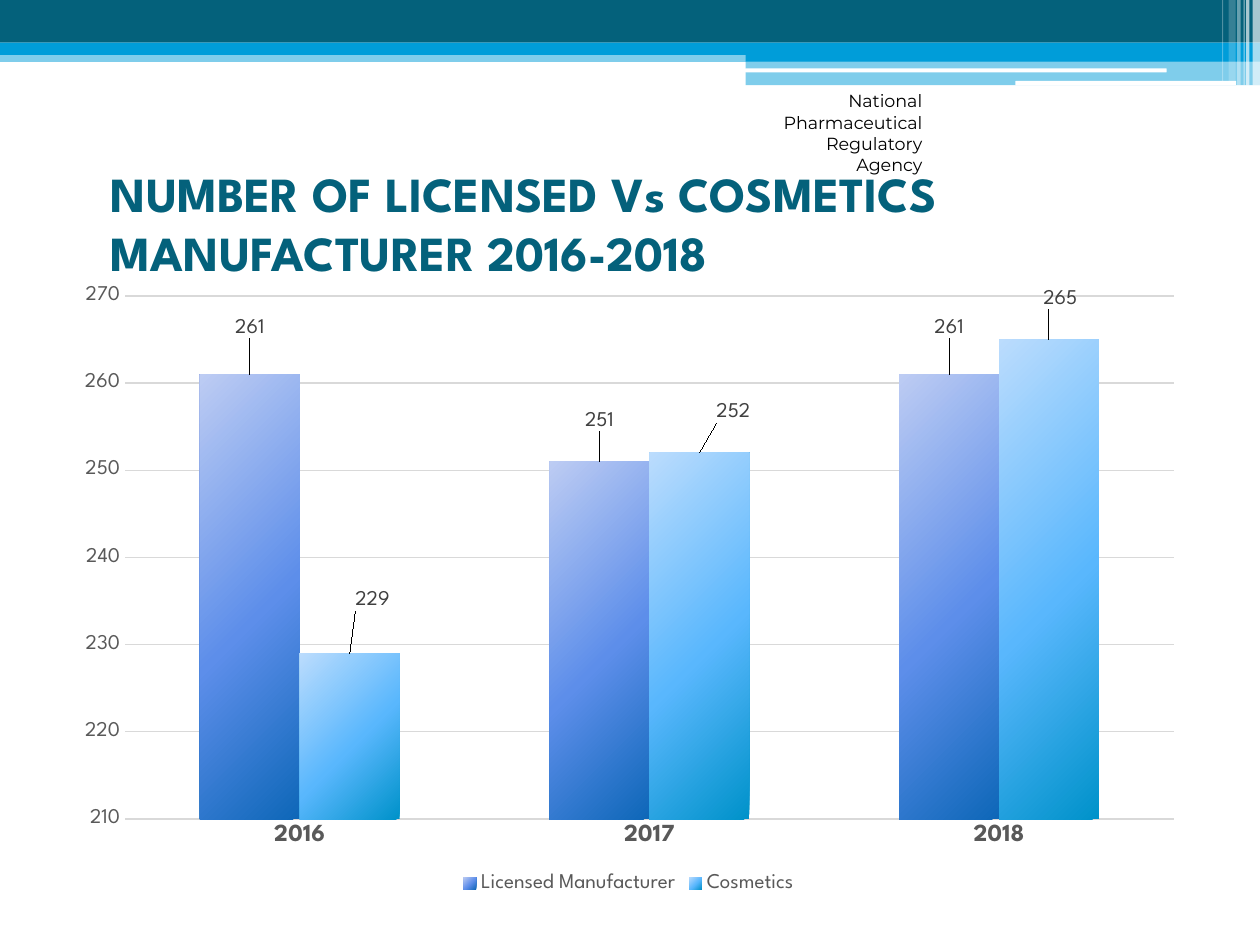
from pptx import Presentation
from pptx.chart.data import CategoryChartData
from pptx.dml.color import RGBColor
from pptx.enum.chart import (XL_CHART_TYPE, XL_LABEL_POSITION,
                             XL_LEGEND_POSITION, XL_TICK_MARK)
from pptx.enum.shapes import MSO_SHAPE
from pptx.enum.text import MSO_ANCHOR, MSO_AUTO_SIZE, PP_ALIGN
from pptx.oxml import parse_xml
from pptx.oxml.ns import nsdecls, qn
from pptx.util import Cm, Pt
from lxml.etree import SubElement

TEAL = RGBColor(0x04, 0x61, 0x7B)
BLUE = RGBColor(0x00, 0x9D, 0xD9)
WHITE = RGBColor(0xFF, 0xFF, 0xFF)
BLACK = RGBColor(0x00, 0x00, 0x00)
GRAY = RGBColor(0x59, 0x59, 0x59)
DARK = RGBColor(0x40, 0x40, 0x40)
PALE = RGBColor(0xD9, 0xD9, 0xD9)
HEAD, BODY = "League Spartan", "Montserrat"
WIDE = 25.4


class Deck:
    def __init__(self):
        self.prs = Presentation()
        self.prs.slide_width, self.prs.slide_height = Cm(WIDE), Cm(19.05)
        self.slide = self.prs.slides.add_slide(self.prs.slide_layouts[5])

    def style(self, font, size, color, bold=False, face=HEAD):
        font.name, font.size, font.bold = face, Pt(size), bold
        font.color.rgb = color

    def place(self, item, box):
        item.left, item.top, item.width, item.height = map(Cm, box)

    def band(self, box, color, alpha=100, kind=MSO_SHAPE.RECTANGLE):
        shape = self.slide.shapes.add_shape(kind, *map(Cm, box))
        shape.shadow.inherit = False
        shape.line.fill.background()
        shape.fill.solid()
        shape.fill.fore_color.rgb = color
        if alpha < 100:
            tint = shape.fill._xPr.find(".//" + qn("a:srgbClr"))
            SubElement(tint, qn("a:alpha")).set("val", str(alpha * 1000))

    def title(self, text, box):
        title = self.slide.shapes.title
        self.place(title, box)
        frame = title.text_frame
        frame.auto_size = MSO_AUTO_SIZE.NONE
        frame.vertical_anchor = MSO_ANCHOR.MIDDLE
        para = frame.paragraphs[0]
        para.alignment = PP_ALIGN.LEFT
        run = para.add_run()
        run.text = text
        self.style(run.font, 28, TEAL, True)

    def note(self, lines, box):
        frame = self.slide.shapes.add_textbox(*map(Cm, box)).text_frame
        frame.word_wrap = True
        for i, line in enumerate(lines):
            para = frame.add_paragraph() if i else frame.paragraphs[0]
            para.alignment = PP_ALIGN.RIGHT
            run = para.add_run()
            run.text = line
            self.style(run.font, 10, BLACK, face=BODY)

    def blend(self, series, stops):
        series.format.fill.solid()
        props = series._element.spPr
        marks = "".join(f'<a:gs pos="{pos}"><a:srgbClr val="{color}"/></a:gs>'
                        for pos, color in zip((0, 55000, 100000), stops))
        grad = parse_xml(
            f'<a:gradFill {nsdecls("a")} rotWithShape="1"><a:gsLst>{marks}'
            '</a:gsLst><a:path path="circle"><a:fillToRect l="-40000" '
            't="-90000" r="140000" b="190000"/></a:path></a:gradFill>')
        props.replace(props.find(qn("a:solidFill")), grad)

    def shift(self, label, x, y):
        """Move a data label by fractions of the chart size."""
        entry = label._get_or_add_dLbl()
        entry.insert(1, parse_xml(
            f'<c:layout {nsdecls("c")}><c:manualLayout><c:x val="{x}"/>'
            f'<c:y val="{y}"/></c:manualLayout></c:layout>'))

    def chart(self, cats, rows, box):
        data = CategoryChartData()
        data.categories = cats
        for name, vals, *_ in rows:
            data.add_series(name, vals)
        chart = self.slide.shapes.add_chart(
            XL_CHART_TYPE.COLUMN_CLUSTERED, *map(Cm, box), data).chart
        chart.has_title = False
        self.style(chart.font, 10, BLACK)

        # Legend
        chart.has_legend = True
        chart.legend.position = XL_LEGEND_POSITION.BOTTOM
        chart.legend.include_in_layout = False
        self.style(chart.legend.font, 12, GRAY)

        # Axes
        cat, val = chart.category_axis, chart.value_axis
        for axis in (cat, val):
            axis.major_tick_mark = axis.minor_tick_mark = XL_TICK_MARK.NONE
        self.style(cat.tick_labels.font, 14, GRAY, True)
        self.style(val.tick_labels.font, 12, GRAY)
        cat.format.line.color.rgb = PALE
        cat.format.line.width = Pt(1)
        val.format.line.fill.background()
        val.minimum_scale, val.maximum_scale, val.major_unit = 210, 270, 10
        grid = val.major_gridlines.format.line
        grid.color.rgb, grid.width = PALE, Pt(0.75)

        # Columns and their labels
        plot = chart.plots[0]
        plot.gap_width, plot.overlap = 150, 0
        plot.vary_by_categories = False
        for series, (_, _, stops, moves) in zip(plot.series, rows):
            self.blend(series, stops)
            labels = series.data_labels
            labels.show_value = True
            labels.position = XL_LABEL_POSITION.OUTSIDE_END
            self.style(labels.font, 12, DARK)
            for i, (x, y) in enumerate(moves):
                label = series.points[i].data_label
                self.style(label.font, 12, DARK)
                label.position = XL_LABEL_POSITION.OUTSIDE_END
                self.shift(label, x, y)

        # Plot area
        area = chart._chartSpace.chart.plotArea
        for old in area.findall(qn("c:layout")):
            area.remove(old)
        sizes = (("x", 0.056), ("y", 0.034), ("w", 0.925), ("h", 0.839))
        rules = "".join(f'<c:{key} val="{size}"/>' for key, size in sizes)
        area.insert(0, parse_xml(
            f'<c:layout {nsdecls("c")}><c:manualLayout>'
            '<c:layoutTarget val="inner"/><c:xMode val="edge"/>'
            f'<c:yMode val="edge"/>{rules}</c:manualLayout></c:layout>'))


def main():
    deck = Deck()

    # Header bands
    half = 15.03
    deck.band((0, 1.02, WIDE, 0.23), BLUE, 50)
    deck.band((0, 0, WIDE, 0.86), TEAL)
    deck.band((0, 0.86, WIDE, 0.25), BLUE)
    deck.band((half, 0.99, WIDE - half, 0.25), BLUE)
    deck.band((half, 1.23, WIDE - half, 0.49), BLUE, 50)
    for box in ((15.02, 1.38, 8.5, 0.08), (20.47, 1.63, 4.45, 0.09)):
        deck.band(box, WHITE, kind=MSO_SHAPE.ROUNDED_RECTANGLE)

    # Stripes at the right edge
    for left, width, high, alpha in (
            (25.25, 0.15, 1.73, 65), (25.12, 0.07, 1.73, 65),
            (25.07, 0.02, 1.73, 60), (24.94, 0.07, 1.73, 40),
            (24.77, 0.14, 1.63, 20), (24.64, 0.02, 1.63, 30)):
        deck.band((left, 0, width, high), WHITE, alpha)

    # Agency name and title
    deck.note(("National", "Pharmaceutical Regulatory", "Agency"),
              (14.6, 1.7, 4.24, 1.27))
    deck.title("NUMBER OF LICENSED Vs COSMETICS MANUFACTURER 2016-2018",
               (1.98, 4.01, 21.41, 0.94))

    # Manufacturer counts
    deck.chart(("2016", "2017", "2018"), (
        ("Licensed Manufacturer", (261, 251, 261),
         ("BDCCF3", "5D8EEA", "0E67B8"),
         ((0, -0.05), (0, -0.04), (0, -0.05))),
        ("Cosmetics", (229, 252, 265),
         ("BBDCFD", "59B7FD", "0092CA"),
         ((0.02, -0.06), (0.03, -0.04), (0.01, -0.04)))),
        (1.24, 5.54, 22.86, 12.57))
    deck.prs.save("out.pptx")


if __name__ == "__main__":
    main()
